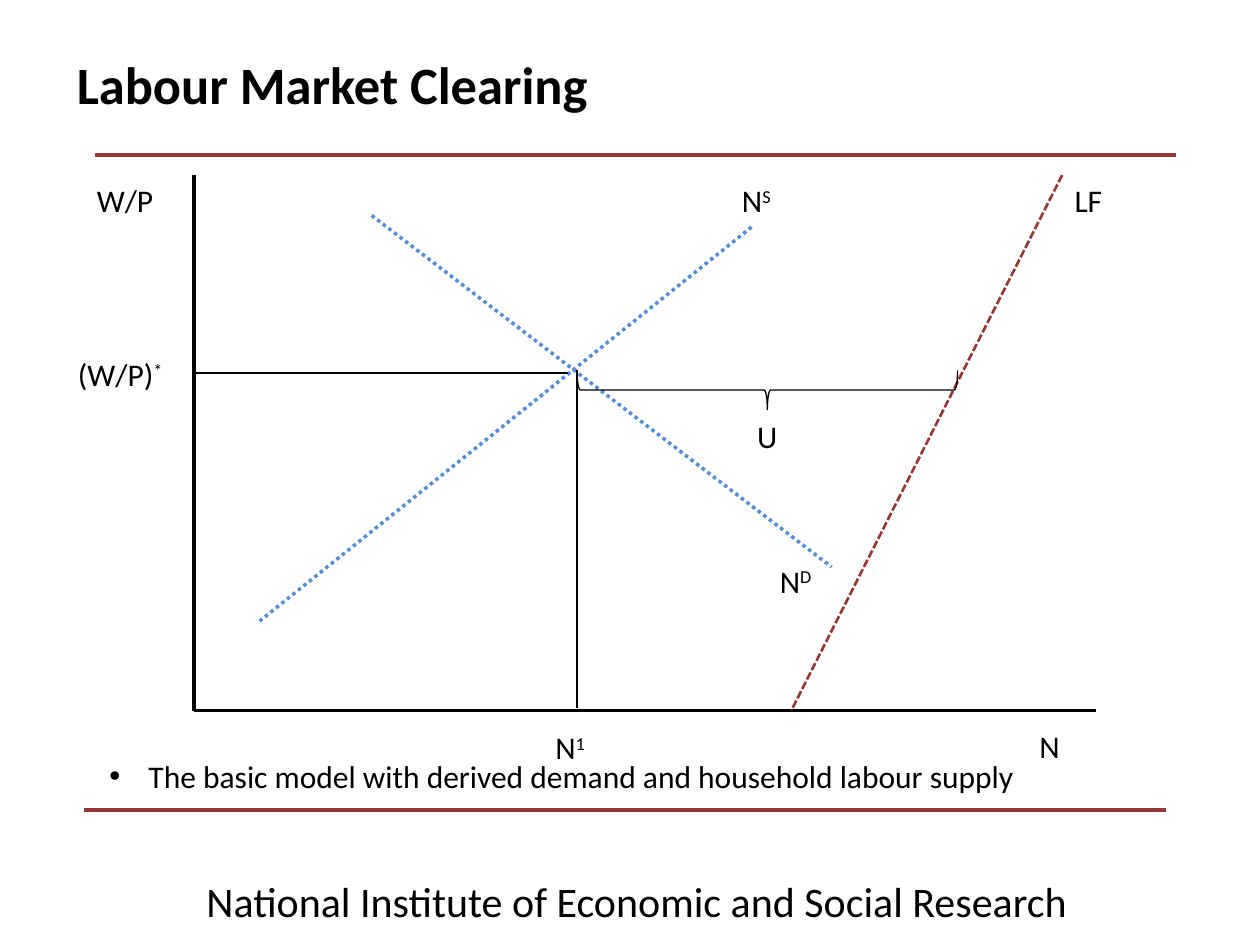
from lxml import etree
from pptx import Presentation
from pptx import util as u
from pptx.dml.color import RGBColor
from pptx.enum import dml, shapes, text
from pptx.oxml import ns

BLACK, RED, BLUE = "000000", "953735", "558ED5"
FONT = "Calibri"

# Diagram geometry, in inches
ORIGIN_X, ORIGIN_Y = 1.54, 5.64
AXIS_TOP, AXIS_RIGHT = 1.39, 8.7
LABEL_HEIGHT = 0.4


def color(value):
    return RGBColor.from_string(value)


def add_line(page, start, end, stroke=BLACK, width=0.75, dash=None):
    """Draw a straight line without a shadow."""
    points = [u.Inches(value) for value in (*start, *end)]
    line = page.shapes.add_connector(shapes.MSO_CONNECTOR.STRAIGHT, *points)
    line.line.color.rgb = color(stroke)
    line.line.width = u.Pt(width)
    if dash:
        line.line.dash_style = dash
    etree.SubElement(line._element.spPr, ns.qn("a:effectLst"))


def add_span(para, words, size, bold=False, raised=False):
    span = para.add_run()
    span.text = words
    span.font.name = FONT
    span.font.size = u.Pt(size)
    span.font.bold = bold
    span.font.color.rgb = color(BLACK)
    if raised:
        span._r.get_or_add_rPr().set("baseline", "30000")


def add_label(page, left, top, width, words, superscript="", size=18):
    """Add a one-line text box and return its paragraph."""
    box = page.shapes.add_textbox(
        u.Inches(left), u.Inches(top), u.Inches(width), u.Inches(LABEL_HEIGHT))
    box.text_frame.word_wrap = True
    para = box.text_frame.paragraphs[0]
    add_span(para, words, size)
    if superscript:
        add_span(para, superscript, size, raised=True)
    return para


def add_bullet(para, indent):
    properties = para._p.get_or_add_pPr()
    properties.set("marL", str(u.Inches(indent)))
    properties.set("indent", str(u.Inches(-indent)))
    etree.SubElement(properties, ns.qn("a:buFont"), typeface="Arial")
    etree.SubElement(properties, ns.qn("a:buChar"), char="•")


def add_title(page, words):
    title = page.shapes.title
    title.left, title.top = u.Inches(0.51), u.Inches(0.36)
    title.width, title.height = u.Inches(9), u.Inches(0.61)
    frame = title.text_frame
    frame.auto_size = text.MSO_AUTO_SIZE.NONE
    frame.vertical_anchor = text.MSO_ANCHOR.MIDDLE
    para = frame.paragraphs[0]
    para.alignment = text.PP_ALIGN.LEFT
    add_span(para, words, 30, bold=True)


def add_brace(page, left, top, width, height):
    """Add a horizontal brace whose tip points down."""
    center_x, center_y = left + width / 2, top + height / 2
    brace = page.shapes.add_shape(
        shapes.MSO_SHAPE.LEFT_BRACE,
        u.Inches(center_x - height / 2), u.Inches(center_y - width / 2),
        u.Inches(height), u.Inches(width))
    brace.rotation = 270
    brace.shadow.inherit = False
    brace.fill.background()
    brace.line.color.rgb = color(BLACK)
    brace.line.width = u.Pt(0.75)


def main():
    deck = Presentation()
    deck.slide_width, deck.slide_height = u.Inches(10), u.Inches(7.5)
    page = deck.slides.add_slide(deck.slide_layouts[5])

    # Page frame: rules, footer and title
    for left, top in ((0.75, 1.23), (0.67, 6.43)):
        add_line(page, (left, top), (left + 8.58, top), RED, 2.25)
    add_label(page, 1.54, 6.9, 7.95,
              "National Institute of Economic and Social Research", size=24)
    add_title(page, "Labour Market Clearing")

    # Axes
    origin = (ORIGIN_X, ORIGIN_Y)
    add_line(page, (ORIGIN_X, AXIS_TOP), origin, width=1.75)
    add_line(page, origin, (AXIS_RIGHT, ORIGIN_Y), width=1.75)

    # Labour force, demand and supply curves
    add_line(page, (8.43, AXIS_TOP), (6.28, ORIGIN_Y), RED, 1.5,
             dml.MSO_LINE.SQUARE_DOT)
    for start, end in (((2.95, 1.71), (6.6, 4.5)), ((2.06, 4.93), (5.98, 1.79))):
        add_line(page, start, end, BLUE, 2, dml.MSO_LINE.ROUND_DOT)

    # Equilibrium guides and unemployment gap
    add_line(page, (ORIGIN_X, 2.96), (4.51, 2.96))
    add_line(page, (4.58, 2.94), (4.58, 5.62))
    add_brace(page, 4.58, 2.94, 3.02, 0.31)

    # Labels: left, top, width, words, superscript
    for label in (
        (0.67, AXIS_TOP, 0.87, "W/P"),
        (8.15, 5.72, 0.55, "N"),
        (6.09, 4.41, 1.18, "N", "D"),
        (8.43, AXIS_TOP, 0.74, "LF"),
        (5.79, AXIS_TOP, 1.18, "N", "S"),
        (4.31, 5.73, 0.54, "N", "1"),
        (0.52, 2.77, 0.94, "(W/P)", "*"),
        (5.91, 3.26, 0.41, "U"),
    ):
        add_label(page, *label)

    # Summary bullet
    summary = add_label(
        page, 0.77, 5.96, 7.48,
        "The basic model with derived demand and household labour supply")
    add_bullet(summary, 0.31)

    deck.save("out.pptx")


if __name__ == "__main__":
    main()
